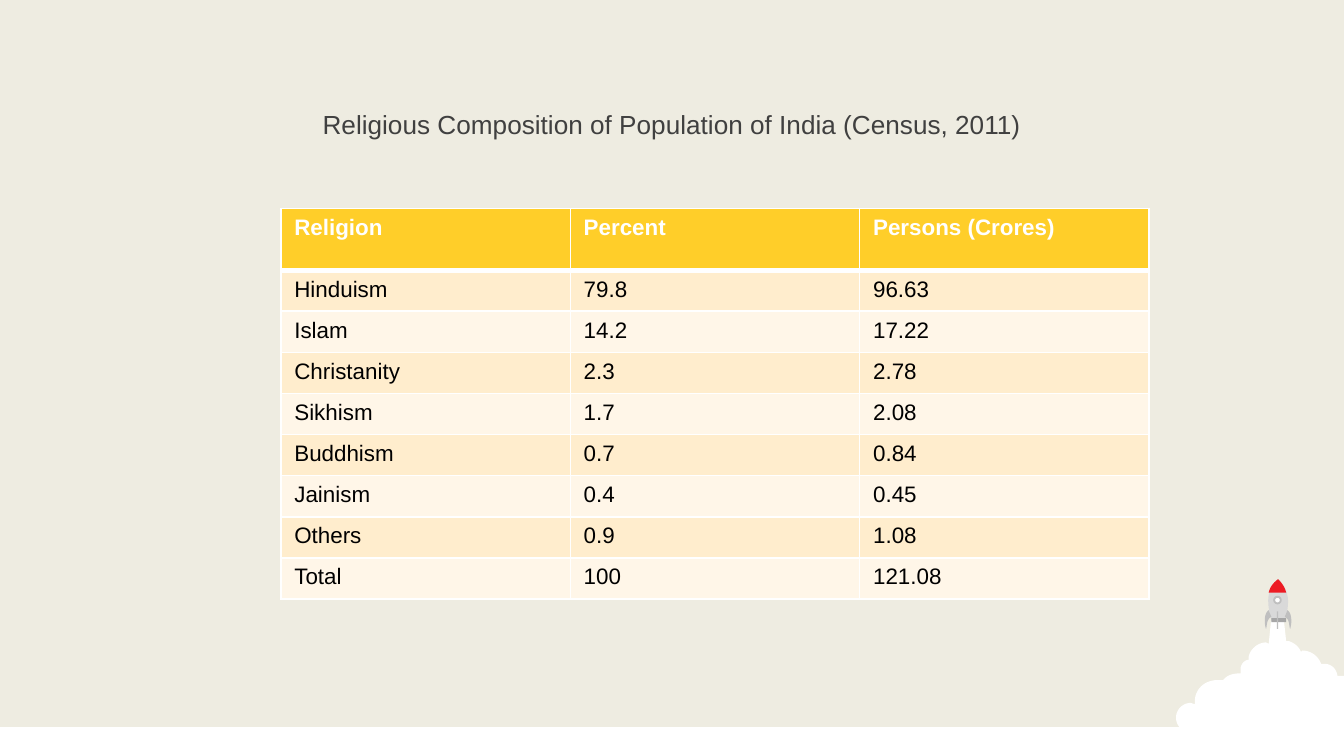
from lxml.etree import SubElement
from pptx import Presentation
from pptx.dml.color import RGBColor
from pptx.enum.shapes import MSO_SHAPE
from pptx.enum.text import MSO_ANCHOR, PP_ALIGN
from pptx.oxml.ns import qn
from pptx.util import Inches, Pt

BEIGE = RGBColor(0xEE, 0xEC, 0xE1)
WHITE = RGBColor(0xFF, 0xFF, 0xFF)
BLACK = RGBColor(0x00, 0x00, 0x00)
CHARCOAL = RGBColor(0x40, 0x40, 0x40)
GOLD = RGBColor(0xFF, 0xCE, 0x29)
PEACH = RGBColor(0xFF, 0xED, 0xCD)
CREAM = RGBColor(0xFF, 0xF6, 0xE8)
RED = RGBColor(0xED, 0x1C, 0x24)
LIGHT_GREY = RGBColor(0xD9, 0xD9, 0xD9)
MID_GREY = RGBColor(0xBF, 0xBF, 0xBF)
DARK_GREY = RGBColor(0xA6, 0xA6, 0xA6)

RELIGIONS = [
    ("Religion", "Percent", "Persons (Crores)"),
    ("Hinduism", "79.8", "96.63"),
    ("Islam", "14.2", "17.22"),
    ("Christanity", "2.3", "2.78"),
    ("Sikhism", "1.7", "2.08"),
    ("Buddhism", "0.7", "0.84"),
    ("Jainism", "0.4", "0.45"),
    ("Others", "0.9", "1.08"),
    ("Total", "100", "121.08"),
]

SMOKE = [
    (9.46, 4.59), (9.55, 4.59), (9.57, 4.77), (9.59, 4.77),
    (9.62, 4.78, 9.65, 4.8, 9.67, 4.83), (9.68, 4.85), (9.69, 4.84),
    (9.75, 4.84, 9.81, 4.88, 9.83, 4.94), (9.86, 4.94),
    (9.9, 4.94, 9.94, 4.97, 9.95, 5.02), (9.95, 5.03), (10, 5.03),
    (10, 5.61), (8.86, 5.61), (8.86, 5.45),
    (8.8, 5.45, 8.75, 5.4, 8.75, 5.34), (8.75, 5.28, 8.8, 5.23, 8.86, 5.23),
    (8.89, 5.24), (8.89, 5.22), (8.89, 5.13, 8.96, 5.06, 9.06, 5.06),
    (9.1, 5.06), (9.11, 5.05), (9.14, 5.02, 9.18, 5.01, 9.23, 5.01),
    (9.23, 4.98), (9.23, 4.95, 9.25, 4.92, 9.28, 4.91), (9.29, 4.91),
    (9.29, 4.89), (9.3, 4.83, 9.36, 4.78, 9.42, 4.78), (9.44, 4.79),
]
HULL = [(9.46, 4.62), (9.44, 4.53, 9.4, 4.4, 9.51, 4.31),
        (9.62, 4.41, 9.58, 4.54, 9.56, 4.62)]
NOSE = [(9.51, 4.31), (9.54, 4.34, 9.56, 4.37, 9.57, 4.41), (9.44, 4.41),
        (9.45, 4.37, 9.47, 4.34, 9.51, 4.31)]
FIN = [(9.44, 4.54), (9.46, 4.59), (9.42, 4.61, 9.43, 4.66, 9.42, 4.68),
       (9.41, 4.65, 9.4, 4.57, 9.44, 4.54)]
ROCKET_AXIS = 9.51


def format_text(frame, text, size, color, bold=False):
    """Write one Arial run into a text frame and return its paragraph."""
    paragraph = frame.paragraphs[0]
    run = paragraph.add_run()
    run.text = text
    for name, value in {"name": "Arial", "size": Pt(size), "bold": bold}.items():
        setattr(run.font, name, value)
    run.font.color.rgb = color
    return paragraph


def paint(shape, fill, line=None):
    """Give a shape a plain fill, an optional outline and no shadow."""
    shape.shadow.inherit = False
    shape.fill.solid()
    shape.fill.fore_color.rgb = fill
    if line is None:
        shape.line.fill.background()
    else:
        shape.line.color.rgb = line
        shape.line.width = Pt(1)


def add_preset(slide, kind, box, fill, line=None):
    """Add a preset shape with its box in inches."""
    paint(slide.shapes.add_shape(kind, *map(Inches, box)), fill, line)


def trace(outline, steps=12):
    """Turn corner points and cubic curves into a list of points."""
    points = [outline[0]]
    for part in outline[1:]:
        if len(part) == 2:
            points.append(part)
            continue
        controls = (points[-1], part[:2], part[2:4], part[4:])
        for step in range(1, steps + 1):
            t = step / steps
            weights = ((1 - t) ** 3, 3 * t * (1 - t) ** 2, 3 * t * t * (1 - t), t ** 3)
            points.append(tuple(sum(w * c[axis] for w, c in zip(weights, controls))
                                for axis in (0, 1)))
    return points


def mirror(outline, axis):
    """Reflect an outline across a vertical axis."""
    return [tuple(2 * axis - value if i % 2 == 0 else value
                  for i, value in enumerate(part)) for part in outline]


def add_outline(slide, outline, fill):
    """Add a closed freeform that follows an outline."""
    start, *rest = [(Inches(x), Inches(y)) for x, y in trace(outline)]
    builder = slide.shapes.build_freeform(*start)
    builder.add_line_segments(rest, close=True)
    paint(builder.convert_to_shape(), fill)


def add_rocket(slide):
    """Draw the rocket rising from its smoke."""
    add_outline(slide, SMOKE, WHITE)
    add_outline(slide, HULL, LIGHT_GREY)
    add_preset(slide, MSO_SHAPE.RECTANGLE, (9.46, 4.6, 0.11, 0.03), DARK_GREY)
    add_outline(slide, NOSE, RED)
    add_preset(slide, MSO_SHAPE.OVAL, (9.48, 4.44, 0.05, 0.05), WHITE, MID_GREY)
    add_preset(slide, MSO_SHAPE.RECTANGLE, (9.5, 4.55, 0.01, 0.13), MID_GREY)
    add_outline(slide, FIN, MID_GREY)
    add_outline(slide, mirror(FIN, ROCKET_AXIS), MID_GREY)


def add_title(slide, text):
    """Add the centred title line."""
    frame = slide.shapes.add_textbox(0, Inches(0.77), Inches(10), Inches(0.31)).text_frame
    for name, value in {"word_wrap": True, "vertical_anchor": MSO_ANCHOR.MIDDLE}.items():
        setattr(frame, name, value)
    paragraph = format_text(frame, text, 14, CHARCOAL)
    paragraph.alignment = PP_ALIGN.CENTER
    paragraph.space_before = Pt(2.8)


def add_borders(cell, widths):
    """Draw white cell borders with the given widths in points."""
    properties = cell._tc.get_or_add_tcPr()
    for index, (side, width) in enumerate(widths.items()):
        border = SubElement(properties, qn(f"a:{side}"), w=str(Pt(width)))
        fill = SubElement(border, qn("a:solidFill"))
        SubElement(fill, qn("a:srgbClr"), val=str(WHITE))
        properties.insert(index, border)


def add_religion_table(slide, rows):
    """Add the table with a gold header and alternating body rows."""
    height, header_height = Inches(2.91), Inches(0.46)
    body_height = (height - header_height) // (len(rows) - 1)
    table = slide.shapes.add_table(len(rows), len(rows[0]), Inches(2.09), Inches(1.55),
                                   Inches(6.46), height).table
    for r, values in enumerate(rows):
        header = r == 0
        table.rows[r].height = header_height if header else body_height
        for c, text in enumerate(values):
            cell = table.cell(r, c)
            cell.fill.solid()
            cell.fill.fore_color.rgb = GOLD if header else PEACH if r % 2 else CREAM
            format_text(cell.text_frame, text, 12, WHITE if header else BLACK, header)
            add_borders(cell, {"lnL": 1, "lnR": 1, "lnT": 3 if r == 1 else 1,
                               "lnB": 3 if header else 1})


def main():
    """Build and save the slide."""
    deck = Presentation()
    deck.slide_width = Inches(10)
    deck.slide_height = deck.slide_width * 9 // 16
    slide = deck.slides.add_slide(deck.slide_layouts[6])
    slide.background.fill.solid()
    slide.background.fill.fore_color.rgb = BEIGE
    add_preset(slide, MSO_SHAPE.RECTANGLE, (0, 5.41, 10, 0.24), WHITE)
    add_rocket(slide)
    add_title(slide, "Religious Composition of Population of India (Census, 2011)")
    add_religion_table(slide, RELIGIONS)
    deck.save("out.pptx")


if __name__ == "__main__":
    main()
